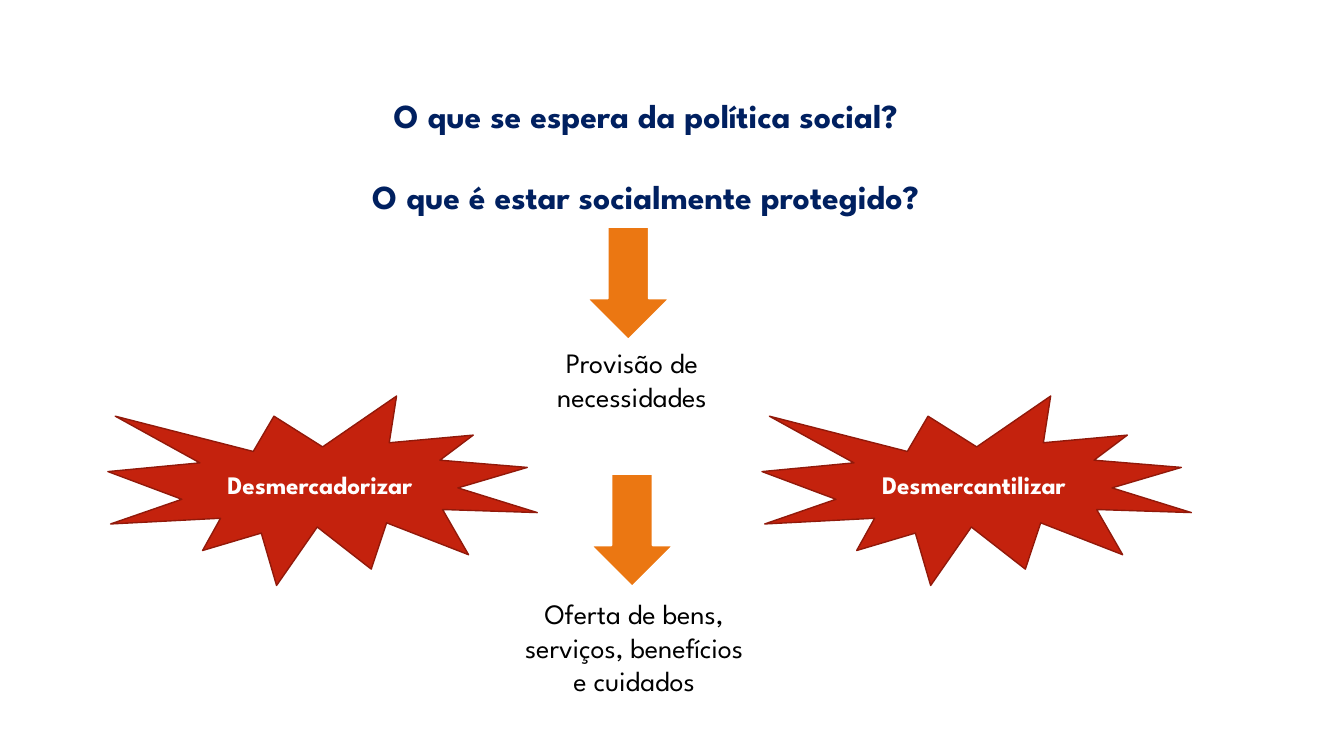
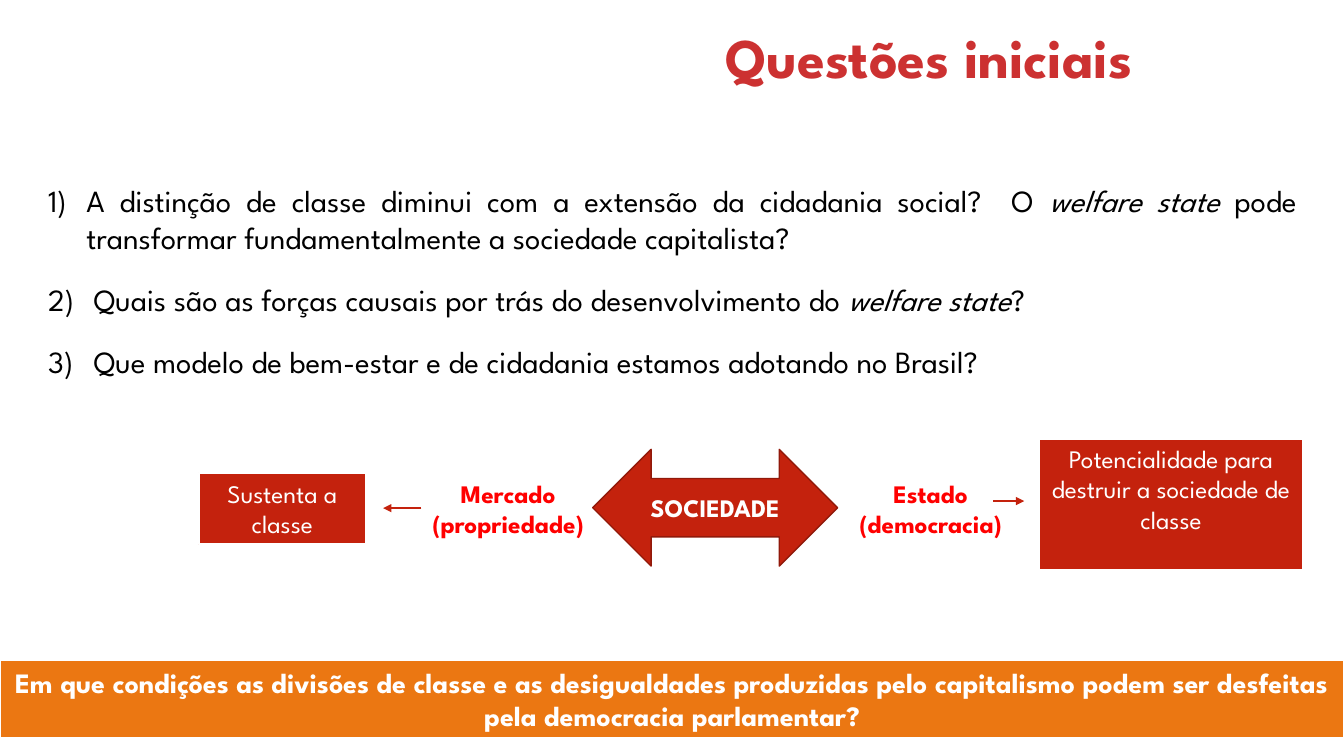
from lxml import etree
from pptx import Presentation
from pptx.dml.color import RGBColor
from pptx.enum.shapes import MSO_CONNECTOR, MSO_SHAPE
from pptx.enum.text import MSO_ANCHOR, MSO_AUTO_SIZE, PP_ALIGN
from pptx.oxml.ns import qn
from pptx.util import Inches, Pt

CENTER, JUSTIFY, LEFT = PP_ALIGN.CENTER, PP_ALIGN.JUSTIFY, PP_ALIGN.LEFT
TOP, MIDDLE = MSO_ANCHOR.TOP, MSO_ANCHOR.MIDDLE
STRAIGHT = MSO_CONNECTOR.STRAIGHT
RECTANGLE, BURST = MSO_SHAPE.RECTANGLE, MSO_SHAPE.EXPLOSION1
DOWN_ARROW, DOUBLE_ARROW = MSO_SHAPE.DOWN_ARROW, MSO_SHAPE.LEFT_RIGHT_ARROW

FONT = "League Spartan"
RED, DARK_RED, ORANGE = "C4220D", "91190A", "EB7712"
NAVY, TITLE_RED, BRIGHT_RED = "002060", "CC3131", "FF0000"
BLACK, WHITE = "000000", "FFFFFF"

# The slide is a grid of 32 columns by 18 rows of square cells
SLIDE_WIDTH, SLIDE_HEIGHT = Inches(13.33), Inches(7.5)
CELL = SLIDE_HEIGHT / 18

TITLE_ONLY = 5


def grid(*cells):
    """Turn columns and rows into slide lengths."""
    return [round(cell * CELL) for cell in cells]


def rgb(color):
    return RGBColor.from_string(color)


def set_attributes(target, values):
    for name, value in values.items():
        setattr(target, name, value)


def write(frame, paragraphs, size, color, bold=False, align=CENTER,
          anchor=TOP, wrap=True, gap=0):
    """Fill a frame; a paragraph is a string or a list of (text, italic) runs."""
    set_attributes(frame, {"word_wrap": wrap, "vertical_anchor": anchor,
                           "auto_size": MSO_AUTO_SIZE.NONE})
    for index, content in enumerate(paragraphs):
        paragraph = frame.add_paragraph() if index else frame.paragraphs[0]
        set_attributes(paragraph, {"alignment": align,
                                   "space_before": Pt(gap if index else 0)})
        runs = [(content, False)] if isinstance(content, str) else content
        for text, italic in runs:
            run = paragraph.add_run()
            run.text = text
            set_attributes(run.font, {"name": FONT, "size": Pt(size),
                                      "bold": bold, "italic": italic})
            run.font.color.rgb = rgb(color)


def place(shape, box):
    set_attributes(shape, dict(zip(("left", "top", "width", "height"), grid(*box))))


def add_title_slide(presentation, box, paragraphs, size, color, **text_format):
    slide = presentation.slides.add_slide(presentation.slide_layouts[TITLE_ONLY])
    title = slide.shapes.title
    place(title, box)
    write(title.text_frame, paragraphs, size, color, bold=True, wrap=False,
          **text_format)
    return slide


def add_text(slide, box, paragraphs, size, color, **text_format):
    text_box = slide.shapes.add_textbox(*grid(*box))
    write(text_box.text_frame, paragraphs, size, color, **text_format)
    return text_box


def add_figure(slide, kind, box, fill, outline, outline_width, text=None,
               size=18, **text_format):
    figure = slide.shapes.add_shape(kind, *grid(*box))
    figure.shadow.inherit = False
    figure.fill.solid()
    figure.fill.fore_color.rgb = rgb(fill)
    figure.line.color.rgb = rgb(outline)
    figure.line.width = Pt(outline_width)
    if text:
        write(figure.text_frame, [text], size, WHITE, **text_format)


def add_emphasis(slide, kind, box, text):
    """Red shape with a dark outline and a bold centred label."""
    add_figure(slide, kind, box, RED, DARK_RED, 1, text, bold=True, anchor=MIDDLE)


def add_panel(slide, box, fill, text, **text_format):
    add_figure(slide, RECTANGLE, box, fill, WHITE, 1.5, text, **text_format)


def add_arrow(slide, start, end, row):
    x_start, x_end, y = grid(start, end, row)
    arrow = slide.shapes.add_connector(STRAIGHT, x_start, y, x_end, y)
    arrow.line.color.rgb = rgb(RED)
    arrow.line.width = Pt(1.5)
    line = arrow.line._get_or_add_ln()
    etree.SubElement(line, qn("a:tailEnd"), type="triangle")
    etree.SubElement(arrow._element.spPr, qn("a:effectLst"))


def number_paragraphs(frame, indents):
    for paragraph, indent in zip(frame.paragraphs, indents):
        paragraph.space_after = Pt(6)
        properties = paragraph._p.get_or_add_pPr()
        properties.set("marL", str(Inches(indent)))
        properties.set("indent", str(-Inches(indent)))
        etree.SubElement(properties, qn("a:buAutoNum"), type="arabicParenR")


def build_expectations(presentation):
    slide = add_title_slide(
        presentation, (7.68, 2.14, 15.38, 3.14),
        ["O que se espera da política social?",
         "O que é estar socialmente protegido?"], 24, NAVY, gap=29)

    # Central chain of arrows and outcomes
    for column, row in ((13.97, 5.4), (14.06, 11.28)):
        add_figure(slide, DOWN_ARROW, (column, row, 1.97, 2.69), ORANGE, WHITE, 1.5)
    add_text(slide, (11.95, 8.11, 6.19, 1.85), ["Provisão de necessidades"], 20, BLACK)
    add_text(slide, (12.12, 14.09, 5.95, 3.48),
             ["Oferta de bens, serviços, benefícios e cuidados"], 20, BLACK)

    # Bursts on both sides
    for column, label in ((2.57, "Desmercadorizar"), (18.14, "Desmercantilizar")):
        add_emphasis(slide, BURST, (column, 9.43, 10.22, 4.51), label)


def build_questions(presentation):
    slide = add_title_slide(presentation, (17.04, 0.41, 11.42, 1.85),
                            ["Questões iniciais"], 40, TITLE_RED, align=LEFT)

    # Numbered questions
    questions = add_text(slide, (0.91, 4.2, 30.19, 5.02), [
        [("A distinção de classe diminui com a extensão da cidadania social?  O ", False),
         ("welfare state", True),
         (" pode transformar fundamentalmente a sociedade capitalista?", False)],
        [("Quais são as forças causais por trás do desenvolvimento do ", False),
         ("welfare state", True), ("?", False)],
        "Que modelo de bem-estar e de cidadania estamos adotando no Brasil?",
    ], 22, BLACK, align=JUSTIFY, gap=12)
    number_paragraphs(questions.text_frame, (0.38, 0.45, 0.45))

    # Society between market and state
    add_emphasis(slide, DOUBLE_ARROW, (14.11, 10.7, 5.83, 2.78), "SOCIEDADE")
    for column, lines in ((9.31, ["Mercado", "(propriedade)"]),
                          (19.37, ["Estado", "(democracia)"])):
        add_text(slide, (column, 11.26, 5.57, 1.7), lines, 18, BRIGHT_RED, bold=True)

    # Consequences for class
    add_panel(slide, (24.72, 10.44, 6.31, 3.14), RED,
              "Potencialidade para destruir a sociedade de classe")
    add_panel(slide, (4.73, 11.26, 3.98, 1.7), RED, "Sustenta a classe")
    add_arrow(slide, 10.03, 9.12, 12.1)
    add_arrow(slide, 23.64, 24.38, 11.93)

    # Closing band
    add_panel(slide, (0, 15.72, 32, 1.85), ORANGE,
              "Em que condições as divisões de classe e as desigualdades produzidas "
              "pelo capitalismo podem ser desfeitas pela democracia parlamentar?",
              size=20, bold=True)


def main():
    presentation = Presentation()
    set_attributes(presentation, {"slide_width": SLIDE_WIDTH,
                                  "slide_height": SLIDE_HEIGHT})
    build_expectations(presentation)
    build_questions(presentation)
    presentation.save("out.pptx")


if __name__ == "__main__":
    main()
